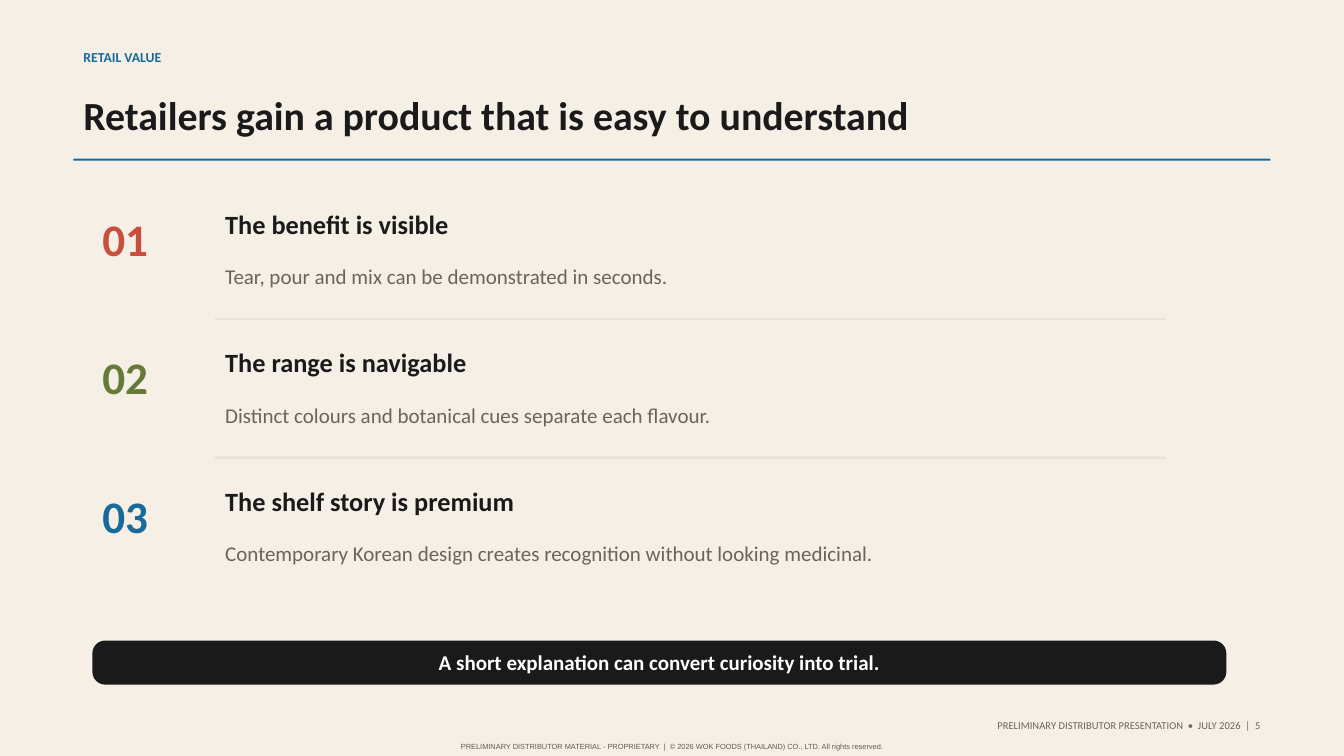
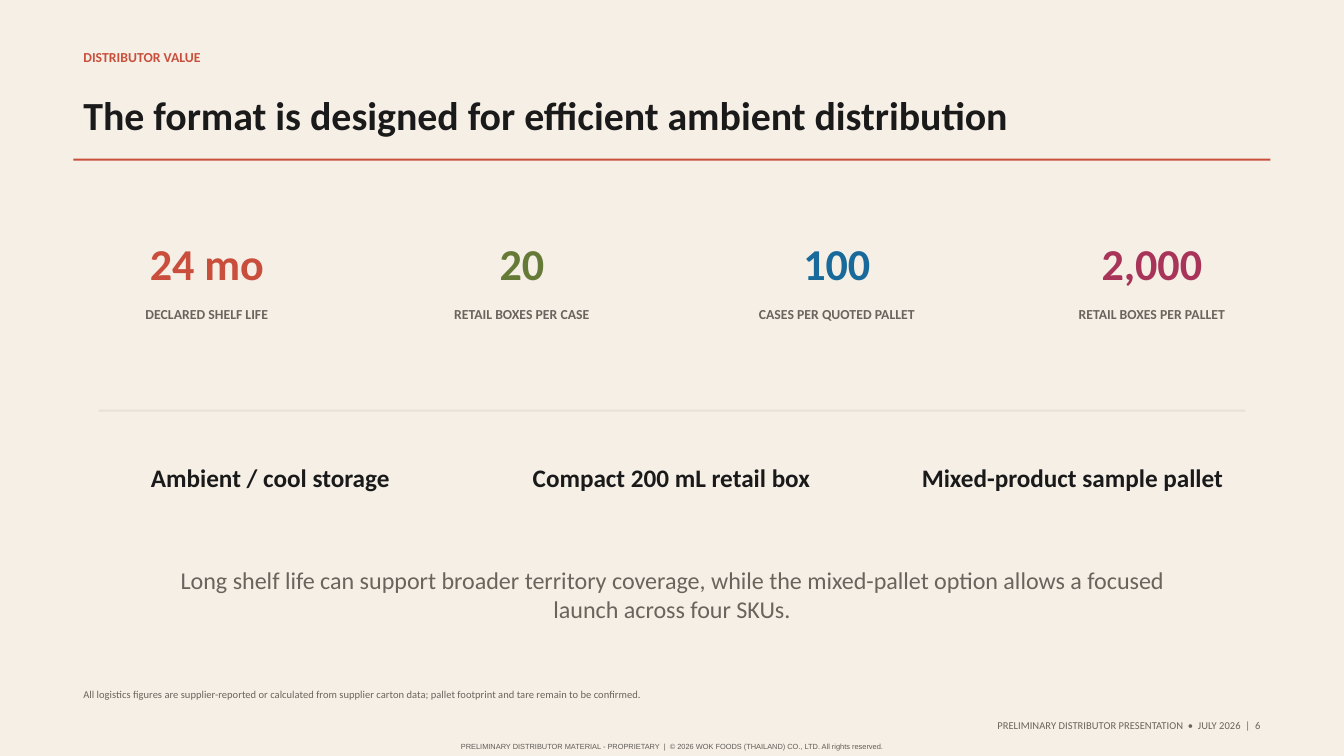
from pptx import Presentation
from pptx.dml.color import RGBColor as Rgb
from pptx.enum.shapes import MSO_SHAPE as Form
from pptx.enum.text import MSO_ANCHOR as Anchor, PP_ALIGN as Align
from pptx.util import Emu, Pt

PX = 9525  # one px at 96 to the inch

HUE = {
    "paper": "F5EFE6", "ink": "1A1A1A", "grey": "6A645E", "legal": "5F5B56",
    "line": "E9E0D6", "white": "FFFFFF", "red": "C94F3C", "green": "667A38",
    "blue": "176A9A", "plum": "A83559",
}

STYLE = {
    "label": {"size": Pt(9.8), "bold": True},
    "title": {"size": Pt(28.5), "bold": True},
    "index": {"size": Pt(32.2), "bold": True},
    "head": {"size": Pt(18.8), "bold": True},
    "body": {"size": Pt(15)},
    "claim": {"size": Pt(15), "bold": True},
    "stat": {"size": Pt(31.5), "bold": True},
    "point": {"size": Pt(18), "bold": True},
    "lead": {"size": Pt(17.2)},
    "small": {"size": Pt(7.5)},
    "legal": {"size": Pt(5.3), "name": "Arial"},
}


def write(slide, area, text, style, hue, align=Align.LEFT, shape=None):
    """Put styled text in a new text box, or in the given shape."""
    if shape is None:
        shape = slide.shapes.add_textbox(*(Emu(n * PX) for n in area))
    frame = shape.text_frame
    frame.word_wrap = True
    frame.vertical_anchor = Anchor.MIDDLE
    par = frame.paragraphs[0]
    par.alignment = align
    run = par.add_run()
    run.text = text
    for key, value in {"name": "Calibri", **STYLE[style]}.items():
        setattr(run.font, key, value)
    run.font.color.rgb = Rgb.from_string(HUE[hue])
    return frame


def block(slide, area, hue, form=Form.RECTANGLE):
    """Draw a plain filled shape without outline."""
    shape = slide.shapes.add_shape(form, *(Emu(n * PX) for n in area))
    shape.shadow.inherit = False
    shape.fill.solid()
    shape.fill.fore_color.rgb = Rgb.from_string(HUE[hue])
    shape.line.fill.background()
    return shape


deck = Presentation()
deck.slide_width, deck.slide_height = Emu(1280 * PX), Emu(720 * PX)

# Shared frame: background, label, title, rule, footers
PAGES = [
    (5, "RETAIL VALUE", "Retailers gain a product that is easy to understand", "blue"),
    (6, "DISTRIBUTOR VALUE", "The format is designed for efficient ambient distribution", "red"),
]
LEGAL = ("PRELIMINARY DISTRIBUTOR MATERIAL - PROPRIETARY  |  "
         "© 2026 WOK FOODS (THAILAND) CO., LTD. All rights reserved.")
slides = []
for page, label, title, hue in PAGES:
    slide = deck.slides.add_slide(deck.slide_layouts[6])
    slide.background.fill.solid()
    slide.background.fill.fore_color.rgb = Rgb.from_string(HUE["paper"])
    write(slide, (70, 42, 440, 24), label, "label", hue)
    write(slide, (70, 76, 1120, 66), title, "title", "ink")
    block(slide, (70, 151, 1140, 2), hue)
    write(slide, (770, 682, 440, 18),
          f"PRELIMINARY DISTRIBUTOR PRESENTATION  •  JULY 2026  |  {page}",
          "small", "grey", Align.RIGHT)
    frame = write(slide, (202, 705, 876, 11), LEGAL, "legal", "legal", Align.CENTER)
    for side in ("left", "top", "right", "bottom"):
        setattr(frame, f"margin_{side}", 0)
    slides.append(slide)
retail, trade = slides

# Retail value: numbered rows with dividers between them
ROWS = [
    ("The benefit is visible", "Tear, pour and mix can be demonstrated in seconds.", "red"),
    ("The range is navigable", "Distinct colours and botanical cues separate each flavour.", "green"),
    ("The shelf story is premium",
     "Contemporary Korean design creates recognition without looking medicinal.", "blue"),
]
for i, (head, body, hue) in enumerate(ROWS):
    top = 192 + 132 * i
    write(retail, (88, top, 90, 70), f"{i + 1:02}", "index", hue)
    write(retail, (205, top, 420, 42), head, "head", "ink")
    write(retail, (205, top + 45, 880, 52), body, "body", "grey")
    if i < len(ROWS) - 1:
        block(retail, (205, top + 111, 905, 2), "line")

# Retail value: closing bar
bar = block(retail, (88, 610, 1080, 42), "ink", Form.ROUNDED_RECTANGLE)
bar.adjustments[0] = 0.29
write(retail, None, "A short explanation can convert curiosity into trial.",
      "claim", "white", Align.CENTER, bar)

# Distributor value: key figures
STATS = [
    ("24 mo", "DECLARED SHELF LIFE", "red"),
    ("20", "RETAIL BOXES PER CASE", "green"),
    ("100", "CASES PER QUOTED PALLET", "blue"),
    ("2,000", "RETAIL BOXES PER PALLET", "plum"),
]
for i, (stat, label, hue) in enumerate(STATS):
    left = 62 + 300 * i
    write(trade, (left, 218, 270, 64), stat, "stat", hue, Align.CENTER)
    write(trade, (left, 283, 270, 32), label, "label", "grey", Align.CENTER)
block(trade, (94, 390, 1092, 2), "line")

# Distributor value: three points, summary and note
POINTS = ["Ambient / cool storage", "Compact 200 mL retail box", "Mixed-product sample pallet"]
for i, point in enumerate(POINTS):
    write(trade, (100 + 382 * i, 434, 315, 42), point, "point", "ink", Align.CENTER)
write(trade, (160, 534, 960, 64),
      "Long shelf life can support broader territory coverage, while the mixed-pallet "
      "option allows a focused launch across four SKUs.", "lead", "grey", Align.CENTER)
write(trade, (70, 652, 850, 18),
      "All logistics figures are supplier-reported or calculated from supplier carton data; "
      "pallet footprint and tare remain to be confirmed.", "small", "grey")

deck.save("out.pptx")
